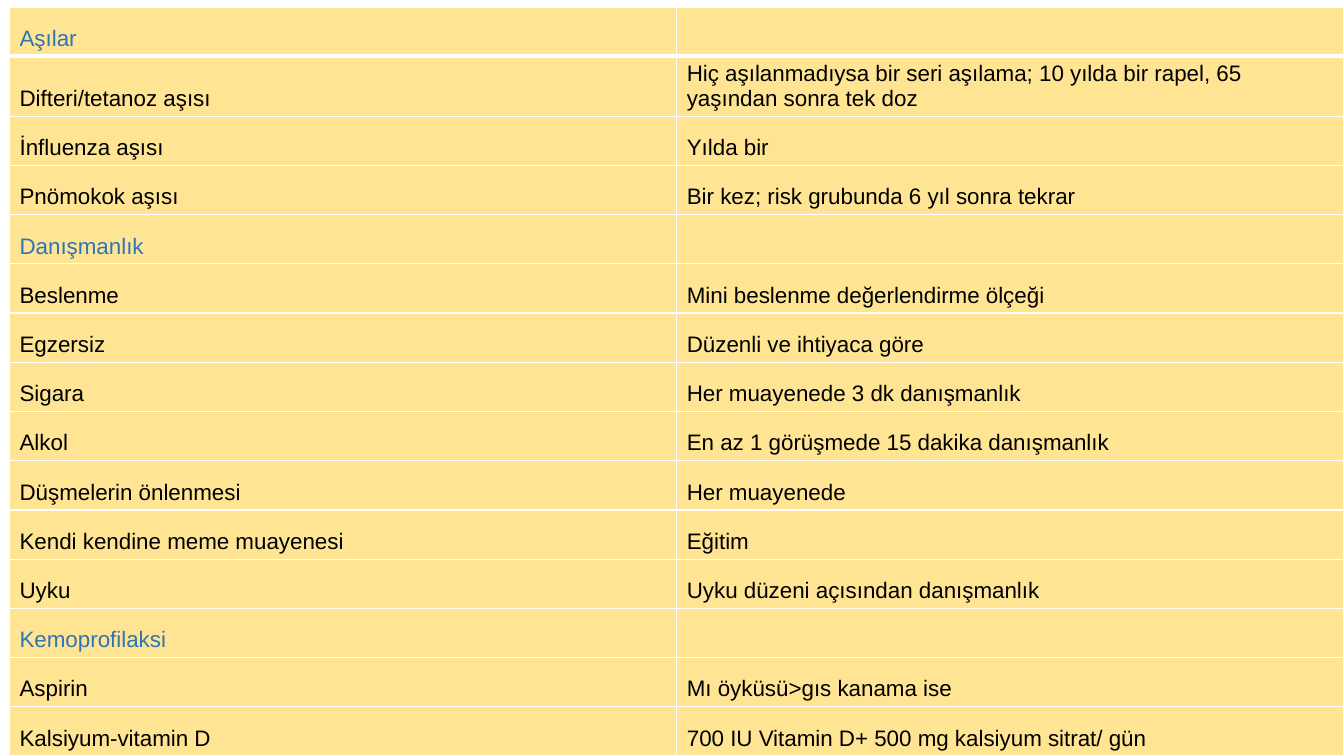
from dataclasses import dataclass

from lxml.etree import SubElement
from pptx import Presentation
from pptx.dml.color import RGBColor
from pptx.enum.text import MSO_ANCHOR
from pptx.oxml.ns import qn
from pptx.util import Cm, Pt


@dataclass(frozen=True)
class Theme:
    font: str = "Arial"
    text_size: int = 16
    text: str = "000000"
    heading: str = "2E75B6"
    fill: str = "FFE593"
    border: str = "FFFFFF"
    border_width: int = 1
    header_rule_width: int = 3


THEME = Theme()

# Each section: heading, then its (topic, recommendation) rows
SECTIONS = [
    ("Aşılar", [
        ("Difteri/tetanoz aşısı",
         "Hiç aşılanmadıysa bir seri aşılama; 10 yılda bir rapel, 65 yaşından sonra tek doz"),
        ("İnfluenza aşısı", "Yılda bir"),
        ("Pnömokok aşısı", "Bir kez; risk grubunda 6 yıl sonra tekrar"),
    ]),
    ("Danışmanlık", [
        ("Beslenme", "Mini beslenme değerlendirme ölçeği"),
        ("Egzersiz", "Düzenli ve ihtiyaca göre"),
        ("Sigara", "Her muayenede 3 dk danışmanlık"),
        ("Alkol", "En az 1 görüşmede 15 dakika danışmanlık"),
        ("Düşmelerin önlenmesi", "Her muayenede"),
        ("Kendi kendine meme muayenesi", "Eğitim"),
        ("Uyku", "Uyku düzeni açısından danışmanlık"),
    ]),
    ("Kemoprofilaksi", [
        ("Aspirin", "Mı öyküsü>gıs kanama ise"),
        ("Kalsiyum-vitamin D", "700 IU Vitamin D+ 500 mg kalsiyum sitrat/ gün"),
    ]),
]
TALL_ROW = 1  # the row whose recommendation takes two lines


def set_borders(cell, top, bottom):
    """Draw the cell's four borders; top and bottom widths are in points."""
    properties = cell._tc.get_or_add_tcPr()
    widths = {"a:lnL": THEME.border_width, "a:lnR": THEME.border_width,
              "a:lnT": top, "a:lnB": bottom}
    for tag, width in widths.items():
        line = SubElement(properties, qn(tag), w=str(Pt(width)))
        fill = SubElement(line, qn("a:solidFill"))
        SubElement(fill, qn("a:srgbClr"), val=THEME.border)


def fill_cell(cell, text, color, row_index):
    rule, thin = THEME.header_rule_width, THEME.border_width
    set_borders(cell, top=rule if row_index == 1 else thin,
                bottom=rule if row_index == 0 else thin)
    cell.fill.solid()
    cell.fill.fore_color.rgb = RGBColor.from_string(THEME.fill)
    cell.vertical_anchor = MSO_ANCHOR.BOTTOM
    cell.text = text
    paragraph = cell.text_frame.paragraphs[0]
    paragraph.font.name = THEME.font
    paragraph.font.size = Pt(THEME.text_size)
    paragraph.font.color.rgb = RGBColor.from_string(color)


def add_care_table(slide, left, top, width, height, tall_height):
    """Place the preventive care table in the given box."""
    rows = []
    for heading, entries in SECTIONS:
        rows.append((heading, "", THEME.heading))
        rows.extend((topic, advice, THEME.text) for topic, advice in entries)

    table = slide.shapes.add_table(len(rows), 2, left, top, width, height).table
    table.first_row = False
    table.horz_banding = False

    # Equal rows share what the tall row leaves
    row_height = (height - tall_height) // (len(rows) - 1)
    for index, (topic, advice, color) in enumerate(rows):
        table.rows[index].height = tall_height if index == TALL_ROW else row_height
        for column, text in enumerate((topic, advice)):
            fill_cell(table.cell(index, column), text, color, index)


def main():
    presentation = Presentation()
    presentation.slide_width = Cm(33.87)
    presentation.slide_height = Cm(19.05)
    slide = presentation.slides.add_slide(presentation.slide_layouts[6])
    add_care_table(slide, Cm(0.24), Cm(0.18), Cm(33.63), Cm(18.87), Cm(1.5))
    presentation.save("out.pptx")


if __name__ == "__main__":
    main()
